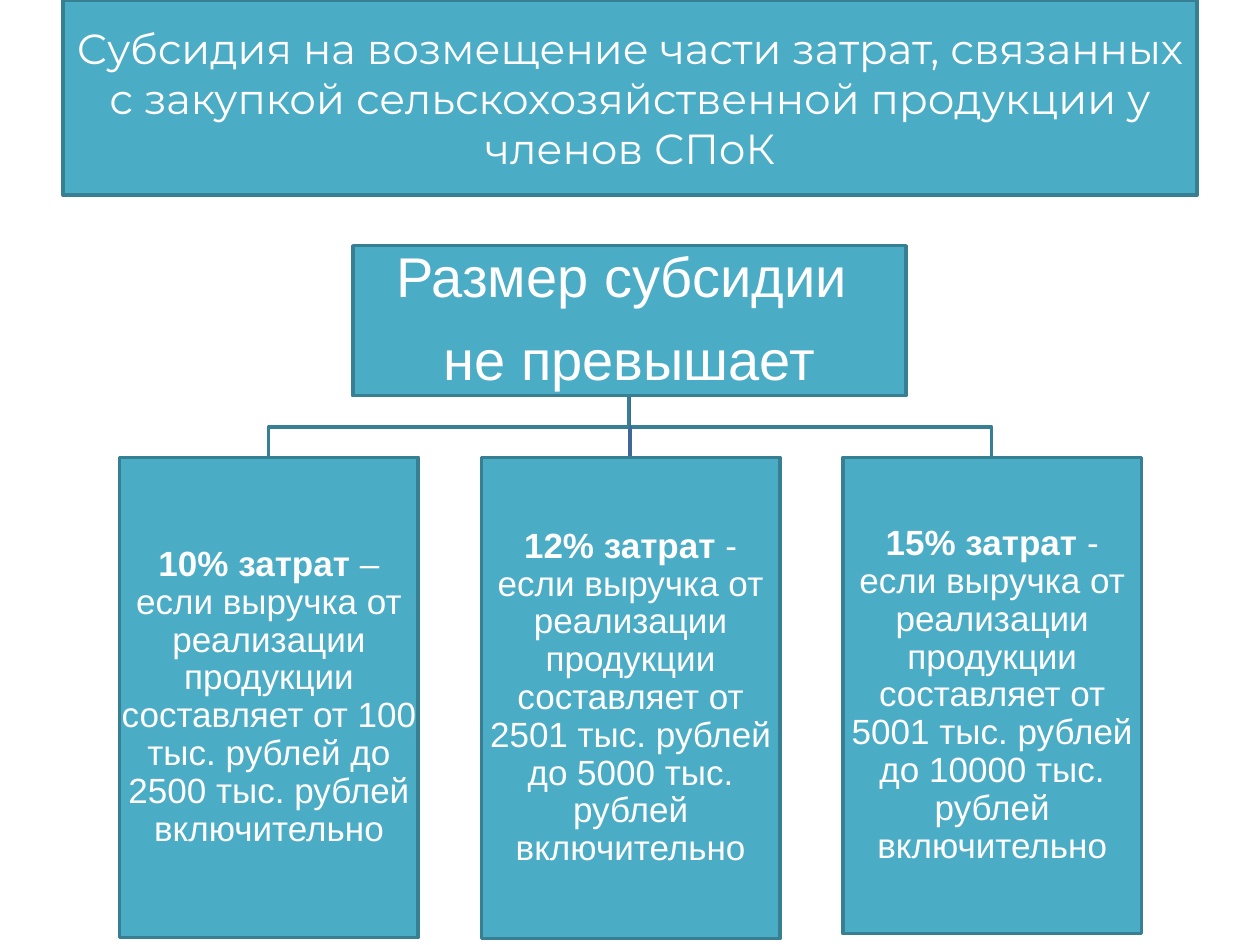
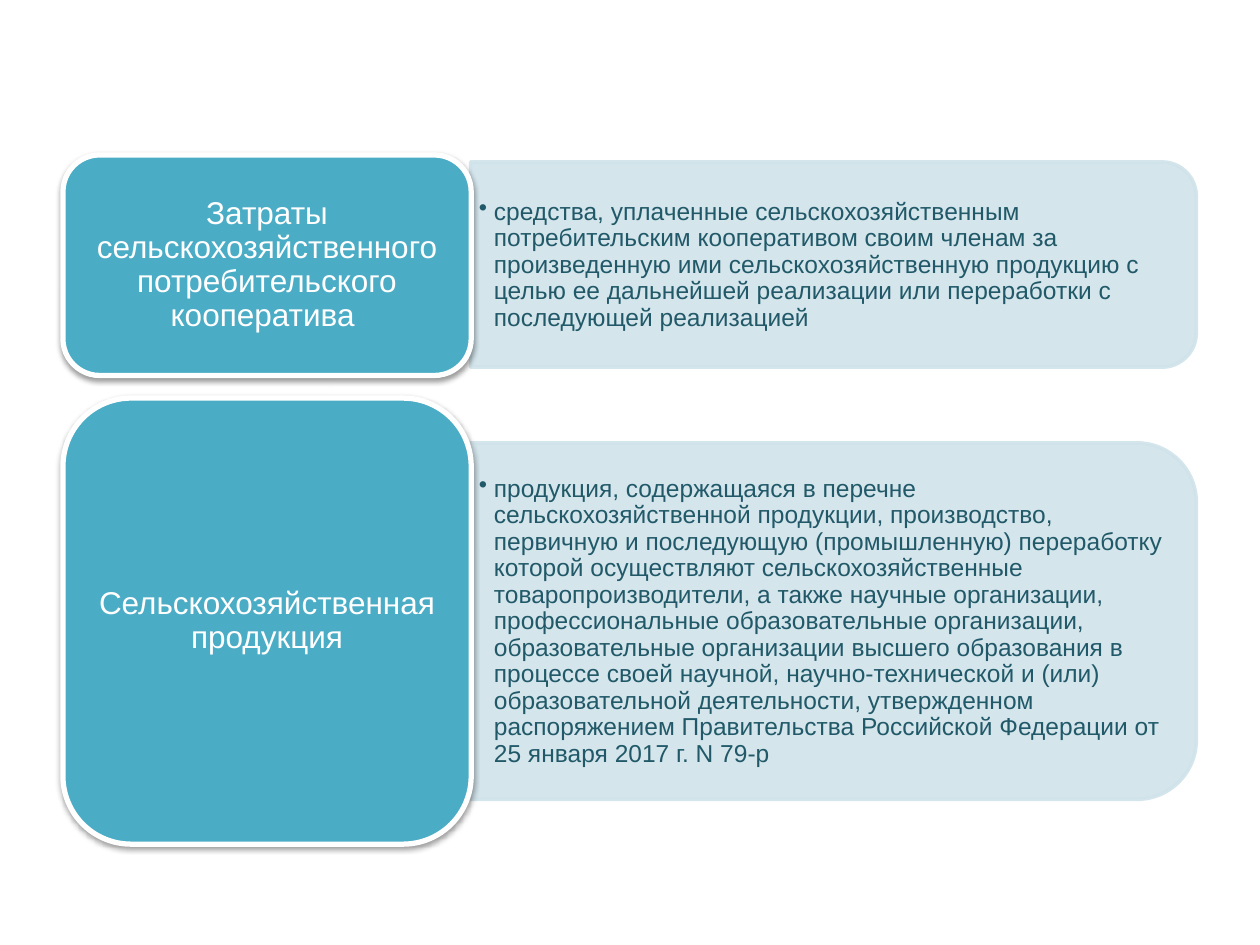
"""Build two slides on the subsidy for agricultural consumer cooperatives."""
from dataclasses import dataclass

from lxml.etree import SubElement
from pptx import Presentation
from pptx.dml.color import RGBColor
from pptx.enum.shapes import MSO_SHAPE
from pptx.enum.text import MSO_ANCHOR, MSO_AUTO_SIZE, PP_ALIGN
from pptx.oxml.ns import qn
from pptx.presentation import Presentation as Deck
from pptx.shapes.autoshape import Shape
from pptx.slide import Slide
from pptx.text.text import TextFrame, _Paragraph, _Run
from pptx.util import Emu, Pt

EMU_PER_PX = 9144
TEAL = RGBColor(0x4B, 0xAC, 0xC6)
TEAL_EDGE = RGBColor(0x37, 0x7F, 0x92)
BLUE_EDGE = RGBColor(0x3F, 0x67, 0x97)
PALE = RGBColor(0xD0, 0xE3, 0xEA)
DARK = RGBColor(0x21, 0x59, 0x68)
BLACK = RGBColor(0, 0, 0)
WHITE = RGBColor(0xFF, 0xFF, 0xFF)
BODY_FONT = "Arial"
TITLE_FONT = "Montserrat"

LIMIT_CENTRE, LIMIT_BOTTOM = 499, 313
BRANCH_Y, TIER_TOP = 339, 363
TIER_WIDTH, TIER_PITCH, MIDDLE_TIER = 237, 287, 500
TERM_LEFT, TERM_WIDTH, TERM_GAP = 50, 324, 18
PANEL_LEFT, PANEL_WIDTH = TERM_LEFT + TERM_WIDTH, 576


@dataclass(frozen=True)
class Box:
    """Place of an element in px, a hundred to the inch."""
    left: int
    top: int
    width: int
    height: int


@dataclass(frozen=True)
class Tier:
    """Share of the costs that is repaid and its condition."""
    share: str
    condition: str
    height: int


@dataclass(frozen=True)
class Term:
    """Defined term with its definition."""
    name: str
    definition: str
    name_height: int
    panel_height: int


TITLE = ("Субсидия на возмещение части затрат, связанных с закупкой "
         "сельскохозяйственной продукции у членов СПоК")
LIMIT_LINES = ("Размер субсидии ", "не превышает")
TIERS = (
    Tier("10% затрат ", "– если выручка от реализации продукции составляет "
         "от 100 тыс. рублей до 2500 тыс. рублей включительно", 381),
    Tier("12% затрат ", "- если выручка от реализации продукции составляет "
         "от 2501 тыс. рублей до 5000 тыс. рублей включительно", 382),
    Tier("15% затрат ", "- если выручка от реализации продукции составляет "
         "от 5001 тыс. рублей до 10000 тыс. рублей включительно", 378),
)
TERMS = (
    Term("Затраты сельскохозяйственного потребительского кооператива ",
         "средства, уплаченные сельскохозяйственным потребительским "
         "кооперативом своим членам за произведенную ими "
         "сельскохозяйственную продукцию с целью ее дальнейшей реализации "
         "или переработки с последующей реализацией", 175, 163),
    Term("Сельскохозяйственная продукция",
         "продукция, содержащаяся в перечне сельскохозяйственной продукции, "
         "производство, первичную и последующую (промышленную) переработку "
         "которой осуществляют сельскохозяйственные товаропроизводители, "
         "а также научные организации, профессиональные образовательные "
         "организации, образовательные организации высшего образования "
         "в процессе своей научной, научно-технической и (или) "
         "образовательной деятельности, утвержденном распоряжением "
         "Правительства Российской Федерации от 25 января 2017 г. N 79-р",
         354, 283),
)


def px(length: int) -> Emu:
    """Turn px into EMU."""
    return Emu(length * EMU_PER_PX)


def place(box: Box) -> tuple[Emu, Emu, Emu, Emu]:
    """Give the box as EMU arguments."""
    return px(box.left), px(box.top), px(box.width), px(box.height)


def paint(shape: Shape, fill: RGBColor, edge: RGBColor, width: int = 2) -> None:
    """Fill and outline a shape."""
    shape.fill.solid()
    shape.fill.fore_color.rgb = fill
    shape.line.color.rgb = edge
    shape.line.width = Pt(width)


def add_block(slide: Slide, kind: MSO_SHAPE, box: Box, fill: RGBColor,
              edge: RGBColor, width: int = 2) -> Shape:
    """Add a painted preset shape without shadow."""
    block = slide.shapes.add_shape(kind, *place(box))
    block.shadow.inherit = False
    paint(block, fill, edge, width)
    return block


def set_frame(frame: TextFrame, side: int, end: int) -> None:
    """Wrap and centre a text frame vertically with the given insets."""
    frame.word_wrap = True
    frame.auto_size = MSO_AUTO_SIZE.NONE
    frame.vertical_anchor = MSO_ANCHOR.MIDDLE
    frame.margin_left = frame.margin_right = px(side)
    frame.margin_top = frame.margin_bottom = px(end)


def format_run(run: _Run, size: int, color: RGBColor = WHITE,
               font: str = BODY_FONT, bold: bool = False) -> None:
    """Set the font of a run."""
    run.font.name = font
    run.font.size = Pt(size)
    run.font.bold = bold
    run.font.color.rgb = color


def format_paragraph(paragraph: _Paragraph, size: int,
                     color: RGBColor = WHITE, after: int = 0,
                     align: PP_ALIGN = PP_ALIGN.CENTER) -> None:
    """Set the tight paragraph style and the font of its runs."""
    paragraph.alignment = align
    paragraph.line_spacing = 0.9
    paragraph.space_after = Pt(after)
    for run in paragraph.runs:
        format_run(run, size, color)


def set_alpha(color_parent, percent: int) -> None:
    """Make the colour inside a fill or effect partly transparent."""
    color = color_parent.find(".//" + qn("a:srgbClr"))
    SubElement(color, qn("a:alpha")).set("val", str(percent * 1000))


def add_soft_shadow(shape: Shape) -> None:
    """Give a shape a soft shadow below it."""
    effects = shape.element.spPr.find(qn("a:effectLst"))
    shadow = SubElement(effects, qn("a:outerShdw"), blurRad=str(Pt(3.1)),
                        dist=str(Pt(1.6)), dir="5400000", rotWithShape="0")
    SubElement(shadow, qn("a:srgbClr"), val=str(BLACK))
    set_alpha(shadow, 38)


def add_bullet(paragraph: _Paragraph) -> None:
    """Give a paragraph a hanging bullet."""
    properties = paragraph._p.get_or_add_pPr()
    properties.set("marL", str(px(12)))
    properties.set("indent", str(-px(12)))
    SubElement(properties, qn("a:buChar"), char="•")


def add_branch(slide: Slide, tier_centre: int, color: RGBColor) -> None:
    """Draw the bent line from the limit box to a tier."""
    builder = slide.shapes.build_freeform(LIMIT_CENTRE, LIMIT_BOTTOM,
                                          scale=EMU_PER_PX)
    builder.add_line_segments([(LIMIT_CENTRE, BRANCH_Y),
                               (tier_centre, BRANCH_Y),
                               (tier_centre, TIER_TOP)], close=False)
    branch = builder.convert_to_shape()
    branch.shadow.inherit = False
    branch.fill.background()
    branch.line.color.rgb = color
    branch.line.width = Pt(2)


def add_title(slide: Slide) -> None:
    """Turn the title placeholder into the title band."""
    title = slide.shapes.title
    title.left, title.top, title.width, title.height = place(
        Box(50, 0, 900, 155))
    paint(title, TEAL, TEAL_EDGE)
    title.text_frame.text = TITLE
    set_frame(title.text_frame, 10, 5)
    heading = title.text_frame.paragraphs[0]
    heading.alignment = PP_ALIGN.CENTER
    format_run(heading.runs[0], 24, font=TITLE_FONT)


def add_limit(slide: Slide) -> None:
    """Add the box at the top of the tree."""
    limit = add_block(slide, MSO_SHAPE.RECTANGLE, Box(280, 195, 439, 119),
                      TEAL, TEAL_EDGE)
    limit.text_frame.text = "\n".join(LIMIT_LINES)
    set_frame(limit.text_frame, 2, 2)
    for line in limit.text_frame.paragraphs:
        format_paragraph(line, 32, after=13)


def add_tier(slide: Slide, tier: Tier, centre: int) -> None:
    """Add a box with one share of the costs."""
    box = Box(centre - TIER_WIDTH // 2, TIER_TOP, TIER_WIDTH, tier.height)
    block = add_block(slide, MSO_SHAPE.RECTANGLE, box, TEAL, TEAL_EDGE)
    set_frame(block.text_frame, 1, 1)
    paragraph = block.text_frame.paragraphs[0]
    paragraph.text = tier.share
    paragraph.add_run().text = tier.condition
    format_paragraph(paragraph, 20)
    paragraph.runs[0].font.bold = True


def add_definition(slide: Slide, term: Term, middle: int) -> None:
    """Add the pale panel, rounded on the right, with a definition."""
    height = term.panel_height
    upright = Box(PANEL_LEFT + (PANEL_WIDTH - height) // 2,
                  middle - PANEL_WIDTH // 2, height, PANEL_WIDTH)
    panel = add_block(slide, MSO_SHAPE.ROUND_2_SAME_RECTANGLE, upright,
                      PALE, PALE)
    panel.rotation = 90
    properties = panel.element.spPr
    set_alpha(properties.find(qn("a:solidFill")), 90)
    set_alpha(properties.find(qn("a:ln")), 90)

    inset = round(height * 0.05)
    area = Box(PANEL_LEFT, middle - height // 2 + inset,
               PANEL_WIDTH - inset, height - 2 * inset)
    frame = slide.shapes.add_textbox(*place(area)).text_frame
    frame.text = term.definition
    set_frame(frame, 6, 3)
    format_paragraph(frame.paragraphs[0], 14, DARK, align=PP_ALIGN.LEFT)
    add_bullet(frame.paragraphs[0])


def add_term(slide: Slide, term: Term, top: int) -> None:
    """Add a term and its definition."""
    add_definition(slide, term, top + term.name_height // 2)
    name = add_block(slide, MSO_SHAPE.ROUNDED_RECTANGLE,
                     Box(TERM_LEFT, top, TERM_WIDTH, term.name_height),
                     TEAL, WHITE, 3)
    add_soft_shadow(name)
    name.text_frame.text = term.name
    set_frame(name.text_frame, 7, 4)
    format_paragraph(name.text_frame.paragraphs[0], 18)


def build_subsidy_slide(deck: Deck) -> None:
    """Build the tree of subsidy sizes."""
    slide = deck.slides.add_slide(deck.slide_layouts[5])
    add_title(slide)
    centres = [MIDDLE_TIER + TIER_PITCH * step for step in (-1, 0, 1)]
    for centre in reversed(centres):
        add_branch(slide, centre,
                   BLUE_EDGE if centre == MIDDLE_TIER else TEAL_EDGE)
    add_limit(slide)
    for tier, centre in zip(TIERS, centres):
        add_tier(slide, tier, centre)


def build_terms_slide(deck: Deck) -> None:
    """Build the list of terms."""
    slide = deck.slides.add_slide(deck.slide_layouts[6])
    top = 123
    for term in TERMS:
        add_term(slide, term, top)
        top += term.name_height + TERM_GAP


def main() -> None:
    """Build and save the presentation."""
    deck = Presentation()
    deck.slide_width, deck.slide_height = px(1000), px(750)
    build_subsidy_slide(deck)
    build_terms_slide(deck)
    deck.save("out.pptx")


if __name__ == "__main__":
    main()
